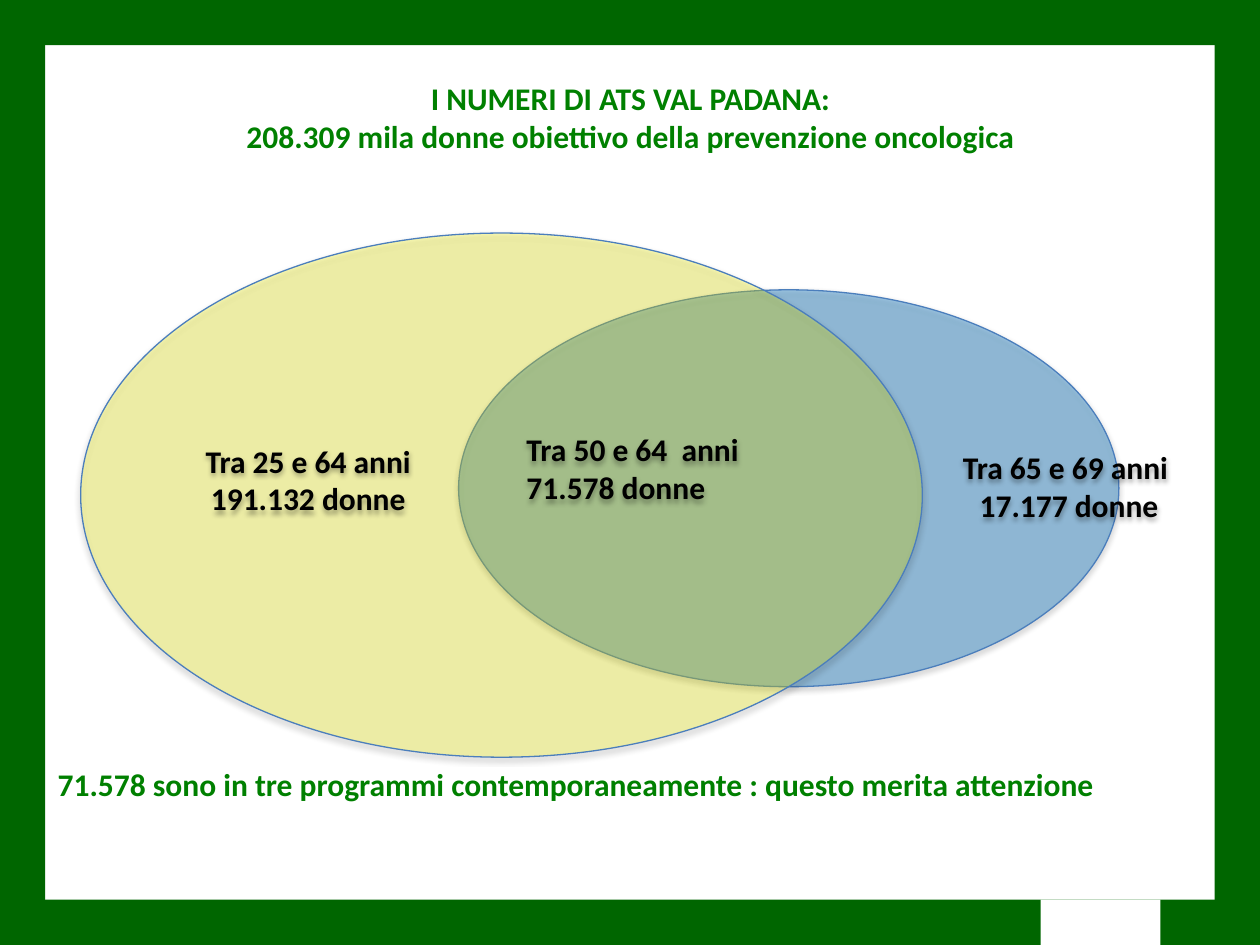
from lxml import etree
from pptx import Presentation
from pptx.dml.color import RGBColor
from pptx.enum.shapes import MSO_SHAPE as Shape
from pptx.enum.text import MSO_ANCHOR as Anchor, PP_ALIGN as Align
from pptx.oxml.ns import qn
from pptx.util import Inches, Pt

WIDTH, HEIGHT, BORDER = 10, 7.5, 0.36
DARK_GREEN, GREEN, WHITE, BLACK = "006600", "008000", "FFFFFF", "000000"
BLUE, YELLOW, OUTLINE = "0070C0", "FFFF00", "4B7EBC"


def color(hex_string):
    return RGBColor.from_string(hex_string)


def add_alpha(color_element, percent):
    etree.SubElement(color_element, qn("a:alpha"), val=str(percent * 1000))


def add_shadow(shape):
    """Give the shape a soft black shadow that falls straight down."""
    shape.shadow.inherit = False
    effects = shape.element.spPr.find(qn("a:effectLst"))
    shadow = etree.SubElement(
        effects, qn("a:outerShdw"), blurRad=str(Pt(3.1)), dist=str(Pt(1.8)),
        dir="5400000", rotWithShape="0")
    add_alpha(etree.SubElement(shadow, qn("a:srgbClr"), val=BLACK), 35)


class SlideBuilder:
    font_name = "Calibri"
    font_size = Pt(18)
    line_width = Pt(0.75)

    def __init__(self, slide):
        self.slide = slide

    def add_filled(self, kind, box, fill):
        shape = self.slide.shapes.add_shape(kind, *map(Inches, box))
        shape.shadow.inherit = False
        shape.fill.solid()
        shape.fill.fore_color.rgb = color(fill)
        return shape

    def bar(self, box, fill):
        self.add_filled(Shape.RECTANGLE, box, fill).line.fill.background()

    def ellipse(self, box, fill, opacity):
        shape = self.add_filled(Shape.OVAL, box, fill)
        add_alpha(shape.element.spPr.find(qn("a:solidFill"))[0], opacity)
        shape.line.color.rgb = color(OUTLINE)
        shape.line.width = self.line_width
        add_shadow(shape)

    def text(self, box, lines, ink, align=Align.CENTER, anchor=Anchor.TOP):
        shape = self.slide.shapes.add_textbox(*map(Inches, box))
        frame = shape.text_frame
        frame.word_wrap = True
        frame.vertical_anchor = anchor
        frame.text = "\n".join(lines)
        for paragraph in frame.paragraphs:
            paragraph.alignment = align
            font = paragraph.font
            font.name, font.size, font.bold = self.font_name, self.font_size, True
            font.color.rgb = color(ink)
        return shape

    def label(self, box, lines, align=Align.CENTER):
        add_shadow(self.text(box, lines, BLACK, align, Anchor.MIDDLE))


def main():
    presentation = Presentation()
    presentation.slide_width = Inches(WIDTH)
    presentation.slide_height = Inches(HEIGHT)
    builder = SlideBuilder(
        presentation.slides.add_slide(presentation.slide_layouts[6]))

    bottom = HEIGHT - BORDER
    for box in ((0, 0, WIDTH, BORDER), (0, bottom, WIDTH, BORDER),
                (0, 0, BORDER, HEIGHT), (WIDTH - BORDER, 0, BORDER, HEIGHT)):
        builder.bar(box, DARK_GREEN)
    builder.bar((8.26, bottom, 0.95, BORDER), WHITE)

    builder.ellipse((3.64, 2.3, 5.24, 3.15), BLUE, 36)
    builder.ellipse((0.64, 1.85, 6.68, 4.16), YELLOW, 28)

    builder.label((4.08, 3.42, 2.98, 0.59),
                  ["Tra 50 e 64  anni", "71.578 donne"], Align.LEFT)
    builder.label((7.32, 3.56, 2.33, 0.59),
                  ["Tra 65 e 69 anni ", "17.177 donne"])
    builder.label((0.87, 3.24, 3.21, 1.13),
                  ["Tra 25 e 64 anni ", "191.132 donne "])

    builder.text((0.36, 0.58, 9.29, 0.71),
                 ["I NUMERI DI ATS VAL PADANA:",
                  "208.309 mila donne obiettivo della prevenzione oncologica"],
                 GREEN)
    builder.text((0.36, 6.02, 9.14, 0.4),
                 ["71.578 sono in tre programmi contemporaneamente : "
                  "questo merita attenzione"], GREEN, Align.LEFT)

    presentation.save("out.pptx")


if __name__ == "__main__":
    main()
